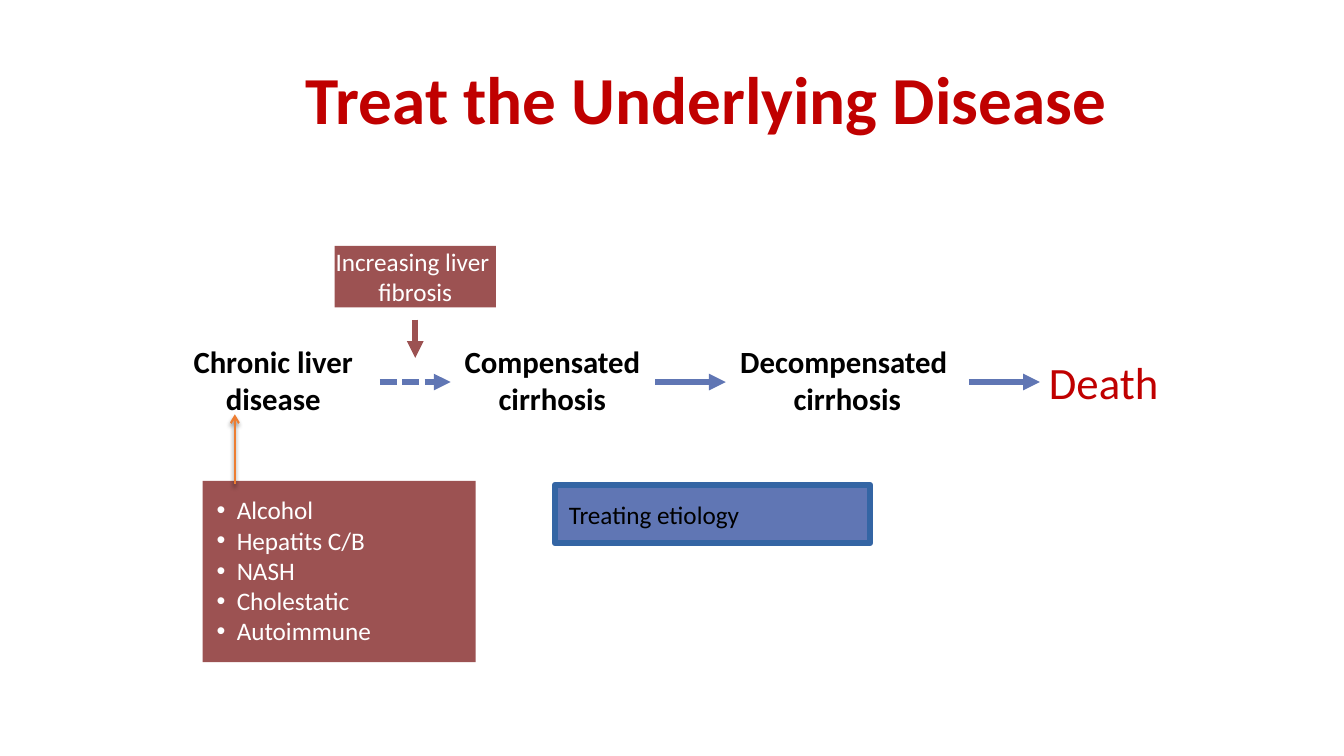
from dataclasses import dataclass

from lxml import etree
from pptx import Presentation
from pptx.dml.color import RGBColor
from pptx.enum import dml, shapes, text
from pptx.oxml import ns
from pptx.util import Pt

RED = "C00000"
BLUE = "6076B4"
BROWN = "9C5252"
BLACK = "000000"
WHITE = "FFFFFF"
ORANGE = "ED7D31"
LEFT = text.PP_ALIGN.LEFT
CENTER = text.PP_ALIGN.CENTER
FLOW_Y = 272.88
STAGE_TOP = 244.8


@dataclass
class Label:
    lines: list[str]
    left: float
    top: float
    width: float
    height: float
    size: float
    color: str
    bold: bool = False
    align: text.PP_ALIGN = CENTER
    first_align: text.PP_ALIGN | None = None
    inset: float = 0
    wrap: bool = False
    fill: str | None = None
    border: str | None = None
    bulleted: bool = False


@dataclass
class Arrow:
    start: tuple[float, float]
    end: tuple[float, float]
    color: str
    width: float = 4
    head: str = "triangle"
    dotted: bool = False
    shadowed: bool = False


LABELS = [
    Label(["Chronic liver", "disease"], 138.24, STAGE_TOP, 120.24, 53.28, 22, BLACK, True, first_align=LEFT),
    Label(["Compensated", "cirrhosis"], 331.2, STAGE_TOP, 126.72, 53.28, 22, BLACK, True),
    Label(["Decompensated ", "cirrhosis"], 527.76, STAGE_TOP, 154.8, 53.28, 22, BLACK, True),
    Label(["Death"], 748.8, 253.44, 79.2, 38.88, 32, RED),
    Label(["Increasing liver ", "fibrosis"], 239.04, 175.68, 115.2, 43.92, 18, WHITE, fill=BROWN),
    Label(["Alcohol", "Hepatits C/B", "NASH", "Cholestatic", "Autoimmune"], 144.72, 343.44, 195.12, 129.6,
          18, WHITE, align=LEFT, inset=10, wrap=True, fill=BROWN, bulleted=True),
    Label(["Treating etiology"], 396.3, 346.32, 225.36, 41.76, 18, BLACK,
          align=LEFT, inset=10, wrap=True, fill=BLUE, border="3465A4"),
]

ARROWS = [
    Arrow((271.44, FLOW_Y), (321.84, FLOW_Y), BLUE, dotted=True),
    Arrow((468, FLOW_Y), (518.4, FLOW_Y), BLUE),
    Arrow((692, FLOW_Y), (742.8, FLOW_Y), BLUE),
    Arrow((296.64, 228.24), (296.64, 255.6), BROWN),
    Arrow((167.76, 345.6), (167.76, 295.92), ORANGE, 1.5, "arrow", shadowed=True),
]


def rgb(value: str) -> RGBColor:
    return RGBColor.from_string(value)


def add_child(parent, tag: str, **attributes: str):
    child = etree.SubElement(parent, ns.qn(tag))
    for name, value in attributes.items():
        child.set(name, value)
    return child


def add_bullet(paragraph) -> None:
    properties = paragraph._p.get_or_add_pPr()
    indent = Pt(14.4)
    properties.set("marL", str(indent))
    properties.set("indent", str(-indent))
    add_child(properties, "a:buFont", typeface="Arial")
    add_child(properties, "a:buChar", char="•")


def format_runs(paragraph, size: float, color: str, bold: bool) -> None:
    for run in paragraph.runs:
        run.font.name = "Calibri"
        run.font.size = Pt(size)
        run.font.bold = bold
        run.font.color.rgb = rgb(color)


def add_title(slide) -> None:
    box = slide.shapes.add_textbox(Pt(167.76), Pt(23.76), Pt(642.24), Pt(99.36))
    frame = box.text_frame
    frame.word_wrap = True
    frame.margin_left = Pt(50.6)
    frame.vertical_anchor = text.MSO_ANCHOR.MIDDLE
    frame.text = "Treat the Underlying Disease"
    frame.paragraphs[0].line_spacing = 0.9
    format_runs(frame.paragraphs[0], 48, RED, True)


def add_label(slide, label: Label) -> None:
    bounds = [Pt(value) for value in (label.left, label.top, label.width, label.height)]
    if label.fill:
        shape = slide.shapes.add_shape(shapes.MSO_SHAPE.RECTANGLE, *bounds)
        shape.shadow.inherit = False
        shape.fill.solid()
        shape.fill.fore_color.rgb = rgb(label.fill)
        if label.border:
            shape.line.color.rgb = rgb(label.border)
            shape.line.width = Pt(4)
        else:
            shape.line.fill.background()
    else:
        shape = slide.shapes.add_textbox(*bounds)
    frame = shape.text_frame
    frame.text = "\n".join(label.lines)
    frame.word_wrap = label.wrap
    frame.auto_size = text.MSO_AUTO_SIZE.SHAPE_TO_FIT_TEXT
    frame.vertical_anchor = text.MSO_ANCHOR.TOP
    frame.margin_left = frame.margin_right = Pt(label.inset)
    frame.margin_top = frame.margin_bottom = Pt(label.inset)
    for paragraph in frame.paragraphs:
        paragraph.alignment = label.align
        if label.bulleted:
            add_bullet(paragraph)
        format_runs(paragraph, label.size, label.color, label.bold)
    if label.first_align is not None:
        frame.paragraphs[0].alignment = label.first_align


def add_arrow(slide, arrow: Arrow) -> None:
    points = [Pt(value) for value in (*arrow.start, *arrow.end)]
    connector = slide.shapes.add_connector(shapes.MSO_CONNECTOR.STRAIGHT, *points)
    connector.line.color.rgb = rgb(arrow.color)
    connector.line.width = Pt(arrow.width)
    if arrow.dotted:
        connector.line.dash_style = dml.MSO_LINE.ROUND_DOT
        connector.line.dash_style = dml.MSO_LINE.SQUARE_DOT
    add_child(connector.line._get_or_add_ln(), "a:tailEnd", type=arrow.head)
    effects = add_child(connector._element.spPr, "a:effectLst")
    if arrow.shadowed:
        shadow = add_child(effects, "a:outerShdw", blurRad=str(Pt(3)), dist=str(Pt(2.4)),
                           dir="5400000", rotWithShape="0")
        shade = add_child(shadow, "a:srgbClr", val=BLACK)
        add_child(shade, "a:alpha", val="45000")


def main() -> None:
    presentation = Presentation()
    presentation.slide_width = Pt(960)
    presentation.slide_height = Pt(540)
    slide = presentation.slides.add_slide(presentation.slide_layouts[6])
    add_title(slide)
    for label in LABELS:
        add_label(slide, label)
    for arrow in ARROWS:
        add_arrow(slide, arrow)
    presentation.save("out.pptx")


if __name__ == "__main__":
    main()
